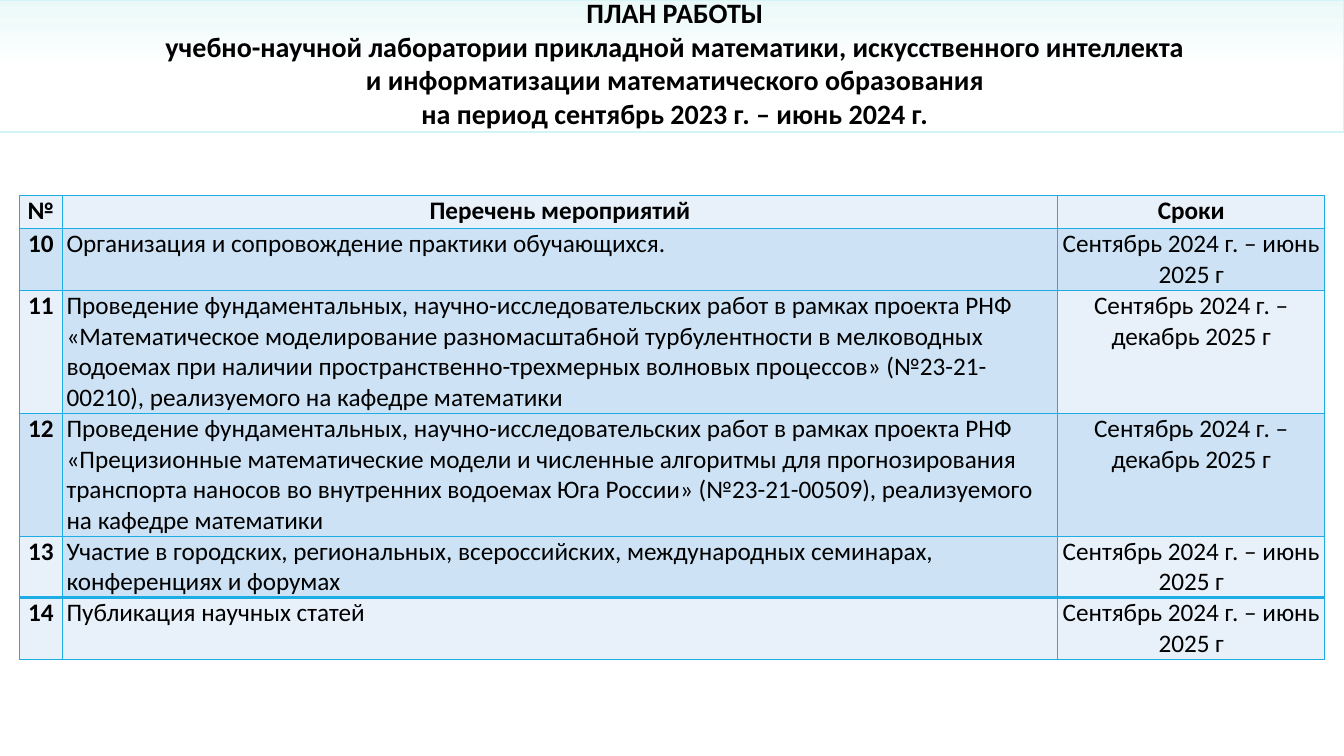
from lxml.etree import SubElement
from pptx import Presentation
from pptx.dml.color import RGBColor
from pptx.enum.shapes import MSO_SHAPE
from pptx.enum.text import MSO_ANCHOR, PP_ALIGN
from pptx.oxml.ns import qn
from pptx.util import Inches, Pt

BORDER = "1CADE4"
LIGHT = "E8F1FA"
DARK = "CDE3F5"
TITLE_LINES = [
    "ПЛАН РАБОТЫ",
    "учебно-научной лаборатории прикладной математики, искусственного интеллекта "
    "и информатизации математического образования",
    "на период сентябрь 2023 г. – июнь 2024 г.",
]
HEADERS = ["№", "Перечень мероприятий", "Сроки"]
UNTIL_JUNE = "Сентябрь 2024 г. – июнь 2025 г"
UNTIL_DECEMBER = "Сентябрь 2024 г. – декабрь 2025 г"
ACTIVITIES = [
    ("Организация и сопровождение практики обучающихся.", UNTIL_JUNE),
    ("Проведение фундаментальных, научно-исследовательских работ в рамках проекта РНФ "
     "«Математическое моделирование разномасштабной турбулентности в мелководных водоемах "
     "при наличии пространственно-трехмерных волновых процессов» (№23-21-00210), "
     "реализуемого на кафедре математики", UNTIL_DECEMBER),
    ("Проведение фундаментальных, научно-исследовательских работ в рамках проекта РНФ "
     "«Прецизионные математические модели и численные алгоритмы для прогнозирования "
     "транспорта наносов во внутренних водоемах Юга России» (№23-21-00509), "
     "реализуемого на кафедре математики", UNTIL_DECEMBER),
    ("Участие в городских, региональных, всероссийских, международных семинарах, "
     "конференциях и форумах", UNTIL_JUNE),
    ("Публикация научных статей", UNTIL_JUNE),
]
FIRST_NUMBER = 10
COLUMN_WIDTHS = [0.43, 9.87, 2.65]
ROW_HEIGHTS = [0.33, 0.61, 1.22, 1.22, 0.61, 0.61]


def color(value):
    return RGBColor.from_string(value)


def set_attributes(target, values):
    for name, value in values.items():
        setattr(target, name, value)


def format_font(font, size, bold):
    set_attributes(font, {"name": "Calibri", "size": Pt(size), "bold": bold})
    font.color.rgb = color("000000")


def add_header_band(slide):
    band = slide.shapes.add_shape(MSO_SHAPE.RECTANGLE, 0, 0, Inches(13.33), Inches(1.31))
    band.shadow.inherit = False
    band.fill.gradient()
    band.fill.gradient_angle = 90
    for stop, position, value in zip(band.fill.gradient_stops, (0.49, 1), ("FFFFFF", "EAF9F8")):
        stop.position = position
        stop.color.rgb = color(value)
    band.line.color.rgb = color("D4F5F7")
    band.line.width = Pt(0.75)


def add_title(slide):
    box = slide.shapes.add_textbox(Inches(1.46), Inches(0.36), Inches(10.47), Inches(0.53))
    set_attributes(box.text_frame, {"word_wrap": True, "vertical_anchor": MSO_ANCHOR.MIDDLE})
    paragraph = box.text_frame.paragraphs[0]
    paragraph.alignment = PP_ALIGN.CENTER
    for index, line in enumerate(TITLE_LINES):
        if index:
            paragraph.add_line_break()
        run = paragraph.add_run()
        run.text = line
        format_font(run.font, 20, True)


def add_borders(cell, top_width):
    properties = cell._tc.get_or_add_tcPr()
    for side, width in {"L": 1, "R": 1, "T": top_width, "B": 1}.items():
        line = SubElement(properties, qn(f"a:ln{side}"), w=str(Pt(width)))
        fill = SubElement(line, qn("a:solidFill"))
        SubElement(fill, qn("a:srgbClr"), val=BORDER)


def fill_cell(cell, text, fill, bold, alignment, margin, top_width):
    add_borders(cell, top_width)
    cell.fill.solid()
    cell.fill.fore_color.rgb = color(fill)
    set_attributes(cell, {
        "margin_left": Inches(margin), "margin_right": Inches(margin),
        "margin_top": 0, "margin_bottom": 0,
    })
    paragraph = cell.text_frame.paragraphs[0]
    paragraph.alignment = alignment
    if text == UNTIL_DECEMBER:
        paragraph._p.get_or_add_pPr().set("indent", str(Inches(-0.07)))
    run = paragraph.add_run()
    run.text = text
    format_font(run.font, 18, bold)


def add_plan_table(slide):
    rows = [HEADERS]
    for number, (activity, period) in enumerate(ACTIVITIES, FIRST_NUMBER):
        rows.append([str(number), activity, period])
    frame = slide.shapes.add_table(
        len(rows), len(HEADERS), Inches(0.19), Inches(1.94),
        Inches(sum(COLUMN_WIDTHS)), Inches(sum(ROW_HEIGHTS)))
    table = frame.table
    for column, width in zip(table.columns, COLUMN_WIDTHS):
        column.width = Inches(width)
    for row, height in zip(table.rows, ROW_HEIGHTS):
        row.height = Inches(height)
    last = len(rows) - 1
    for row_index, texts in enumerate(rows):
        for column_index, text in enumerate(texts):
            heading = row_index == 0 or column_index == 0
            banded = row_index % 2 == 1 and row_index < last or row_index == 3
            if column_index == 1:
                dark = 0 < row_index < last
            else:
                dark = row_index in (1, 3)
            alignment = PP_ALIGN.CENTER
            if column_index == 1 and not heading:
                alignment = PP_ALIGN.JUSTIFY if row_index == 1 else PP_ALIGN.LEFT
            fill_cell(
                table.cell(row_index, column_index), text, DARK if dark else LIGHT,
                heading, alignment, 0.07 if heading else 0.04, 2 if row_index == last else 1)


def main():
    presentation = Presentation()
    set_attributes(presentation, {"slide_width": Inches(13.33), "slide_height": Inches(7.5)})
    slide = presentation.slides.add_slide(presentation.slide_layouts[6])
    add_header_band(slide)
    add_title(slide)
    add_plan_table(slide)
    presentation.save("out.pptx")


if __name__ == "__main__":
    main()
